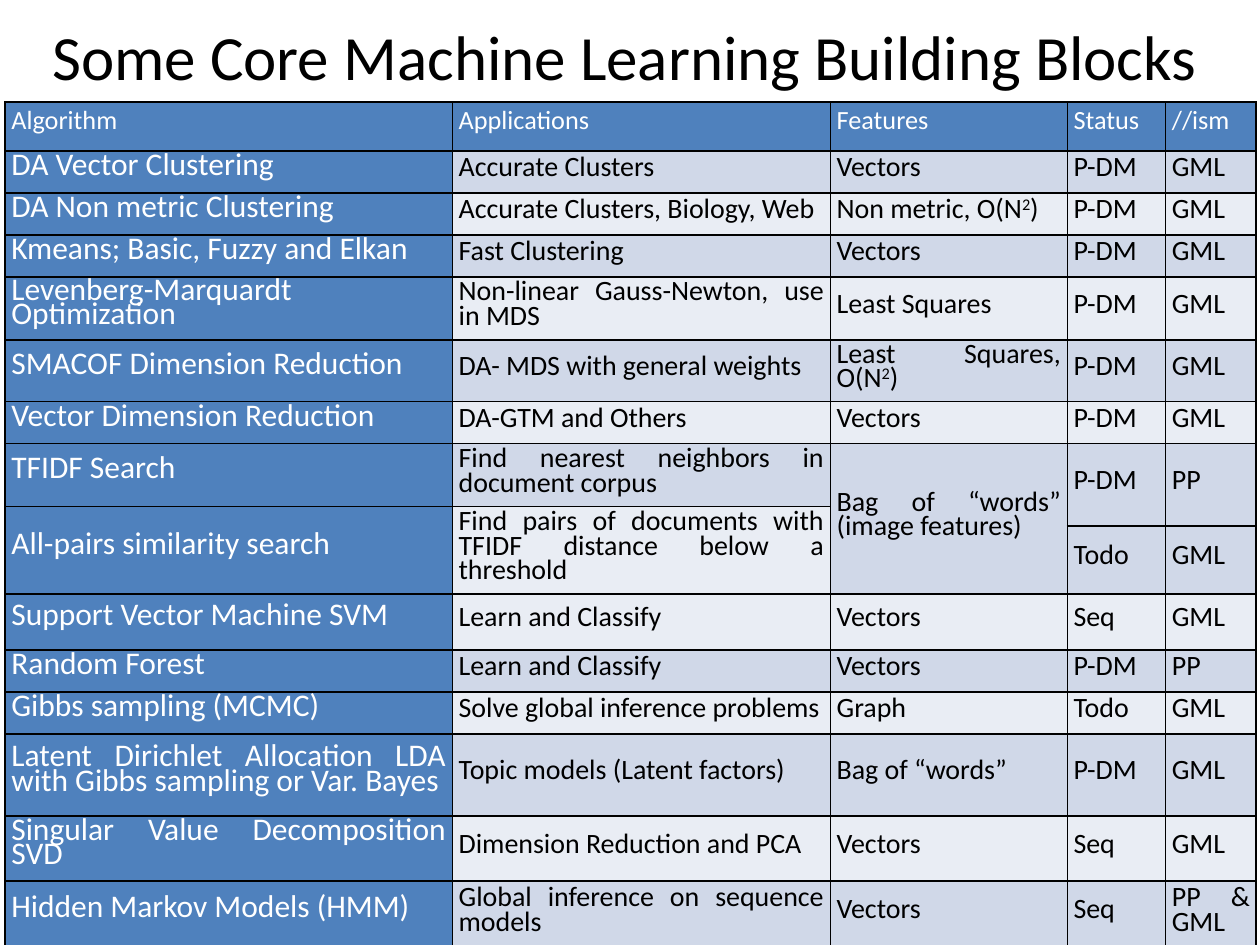
"""Builds a slide with a table of core machine learning building blocks."""
from lxml import etree
from pptx import Presentation
from pptx.dml.color import RGBColor
from pptx.enum.text import MSO_ANCHOR, MSO_AUTO_SIZE, PP_ALIGN
from pptx.oxml.ns import qn
from pptx.util import Pt

LEFT, CENTER, JUSTIFY = PP_ALIGN.LEFT, PP_ALIGN.CENTER, PP_ALIGN.JUSTIFY
MIDDLE = MSO_ANCHOR.MIDDLE
NO_FIT = MSO_AUTO_SIZE.NONE
FONT = "Calibri"
COLORS = {"head": "4F81BD", "dark": "D0D8E8", "light": "E9EDF4",
          "white": "FFFFFF", "black": "000000"}

WIDTHS = [255.6, 216, 135.4, 56.2, 51.8]
HEIGHTS = [26, 24, 24, 24, 36, 28, 24, 36, 11, 39, 32, 24, 24, 47, 37, 38]
MERGES = [((7, 2), (9, 2)), ((7, 3), (8, 3)), ((7, 4), (8, 4)),
          ((8, 0), (9, 0)), ((8, 1), (9, 1))]
ROWS = [
    ("Algorithm", "Applications", "Features", "Status", "//ism"),
    ("DA Vector Clustering", "Accurate Clusters", "Vectors", "P-DM", "GML"),
    ("DA Non metric Clustering", "Accurate Clusters, Biology, Web",
     "Non metric, O(N^2^)", "P-DM", "GML"),
    ("Kmeans; Basic, Fuzzy and Elkan", "Fast Clustering", "Vectors", "P-DM", "GML"),
    ("Levenberg-Marquardt Optimization", "Non-linear Gauss-Newton, use in MDS",
     "Least Squares", "P-DM", "GML"),
    ("SMACOF Dimension Reduction", "DA- MDS with general weights",
     "Least Squares, O(N^2^)", "P-DM", "GML"),
    ("Vector Dimension Reduction", "DA-GTM and Others", "Vectors", "P-DM", "GML"),
    ("TFIDF Search", "Find nearest neighbors in document corpus",
     "Bag of “words” (image features)", "P-DM", "PP"),
    ("All-pairs similarity search",
     "Find pairs of documents with TFIDF distance below a threshold", "", "", ""),
    ("", "", "", "Todo", "GML"),
    ("Support Vector Machine SVM", "Learn and Classify", "Vectors", "Seq", "GML"),
    ("Random Forest", "Learn and Classify", "Vectors", "P-DM", "PP"),
    ("Gibbs sampling (MCMC)", "Solve global inference problems", "Graph", "Todo", "GML"),
    ("Latent Dirichlet Allocation LDA with Gibbs sampling or Var. Bayes",
     "Topic models (Latent factors)", "Bag of “words”", "P-DM", "GML"),
    ("Singular Value Decomposition SVD", "Dimension Reduction and PCA",
     "Vectors", "Seq", "GML"),
    ("Hidden Markov Models (HMM)", "Global inference on sequence models",
     "Vectors", "Seq", "PP & GML"),
]


def rgb(name):
    """Return the named colour."""
    return RGBColor.from_string(COLORS[name])


def set_text(tf, text, size, color="black", align=LEFT, spacing=None):
    """Write one paragraph, raising the parts between carets."""
    p = tf.paragraphs[0]
    p.alignment = align
    if spacing:
        p.line_spacing = Pt(spacing)
    p.font.size = Pt(size)
    for i, part in enumerate(text.split("^")):
        r = p.add_run()
        r.text = part
        r.font.name = FONT
        r.font.size = Pt(size)
        r.font.bold = False
        r.font.color.rgb = rgb(color)
        if i % 2:
            r.font._element.set("baseline", "30000")


def set_borders(cell):
    """Draw a thin black line on each side of a cell."""
    tc_pr = cell._tc.get_or_add_tcPr()
    for side in ("a:lnL", "a:lnR", "a:lnT", "a:lnB"):
        ln = etree.SubElement(tc_pr, qn(side), w=str(Pt(1)))
        fill = etree.SubElement(ln, qn("a:solidFill"))
        etree.SubElement(fill, qn("a:srgbClr"), val=COLORS["black"])


def format_cell(cell, fill, inset):
    """Set the borders, fill, anchor and insets of a cell."""
    set_borders(cell)
    cell.fill.solid()
    cell.fill.fore_color.rgb = rgb(fill)
    cell.vertical_anchor = MIDDLE
    cell.margin_left = cell.margin_right = Pt(3.6)
    cell.margin_top = cell.margin_bottom = Pt(inset)


def add_title(s, text):
    """Place and fill the title placeholder."""
    sp = s.shapes.title
    sp.left, sp.top, sp.width, sp.height = Pt(0), Pt(3), Pt(714), Pt(57.6)
    tf = sp.text_frame
    tf.auto_size = NO_FIT
    tf.vertical_anchor = MIDDLE
    set_text(tf, text, 36, align=CENTER)


def add_blocks_table(s):
    """Add the table of algorithms with its merged cells."""
    table = s.shapes.add_table(len(ROWS), len(WIDTHS), Pt(2.9), Pt(58.3),
                               Pt(sum(WIDTHS)), Pt(sum(HEIGHTS))).table
    table.first_row = table.horz_banding = False
    for column, width in zip(table.columns, WIDTHS):
        column.width = Pt(width)
    for row, height in zip(table.rows, HEIGHTS):
        row.height = Pt(height)
    for first, last in MERGES:
        table.cell(*first).merge(table.cell(*last))
    for i, row in enumerate(ROWS):
        band = "dark" if i % 2 else "light"
        for j, text in enumerate(row):
            cell = table.cell(i, j)
            head = i == 0 or j == 0
            format_cell(cell, "head" if head else band, 3.6 if i else 8)
            if cell.is_spanned:
                continue
            if i == 0:
                set_text(cell.text_frame, text, 15, "white", spacing=12)
            else:
                set_text(cell.text_frame, text, 18 if head else 16,
                         "white" if head else "black", JUSTIFY, 14)


def main():
    """Build and save the slide."""
    prs = Presentation()
    prs.slide_width, prs.slide_height = Pt(720), Pt(540)
    s = prs.slides.add_slide(prs.slide_layouts[5])
    add_title(s, "Some Core Machine Learning Building Blocks")
    add_blocks_table(s)
    prs.save("out.pptx")


if __name__ == "__main__":
    main()
